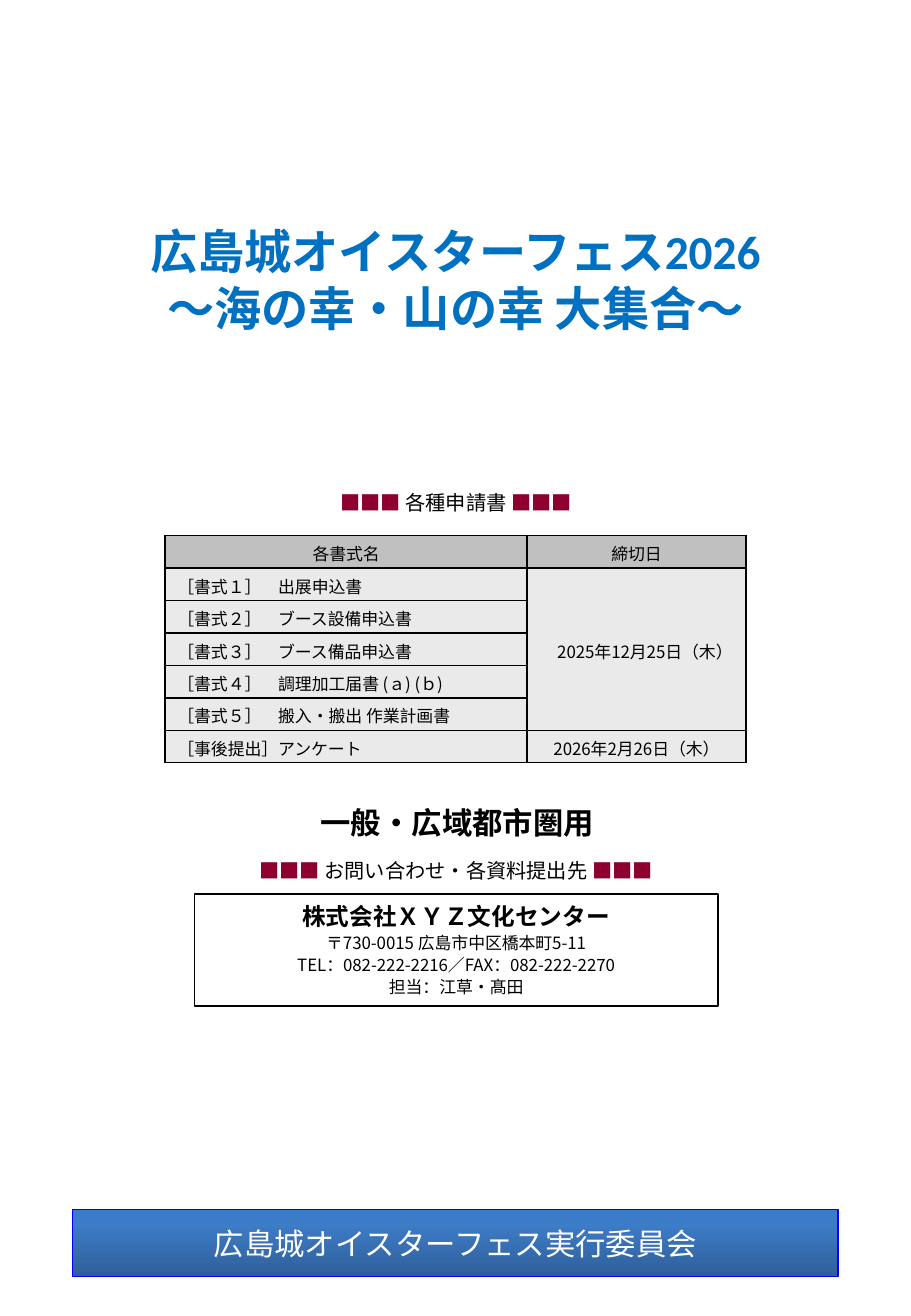
from copy import deepcopy

from lxml.etree import SubElement
from pptx import Presentation
from pptx.dml.color import RGBColor
from pptx.enum.shapes import MSO_SHAPE as SHAPE
from pptx.enum.text import MSO_ANCHOR as ANCHOR, MSO_AUTO_SIZE as AUTO, PP_ALIGN as ALIGN
from pptx.oxml.ns import qn
from pptx.util import Pt

BLACK = RGBColor(0, 0, 0)
WHITE = RGBColor(255, 255, 255)
TITLE_BLUE = RGBColor(0x00, 0x70, 0xC0)
WINE = RGBColor(0x8E, 0x00, 0x2F)
HEAD_GRAY = RGBColor(0xC0, 0xC0, 0xC0)
CELL_GRAY = RGBColor(0xEA, 0xEA, 0xEA)
LINE_BLUE = RGBColor(0, 0, 255)
BANNER = [(0, RGBColor(0x2F, 0x5F, 0x99)), (0.8, RGBColor(0x3D, 0x7C, 0xC7)),
          (1, RGBColor(0x3A, 0x7C, 0xCB))]
CALIBRI, NOTO = "Calibri", "Noto Sans CJK JP"


def add_run(p, text, size=10, font=NOTO, color=BLACK, bold=False):
    r = p.add_run()
    r.text = text
    f = r.font
    f.size, f.name, f.bold = Pt(size), font, bold
    f.color.rgb = color
    # East Asian text takes its face from a:ea
    SubElement(r._r.get_or_add_rPr(), qn("a:ea"), typeface=font)


def write(tf, lines, align=ALIGN.CENTER, spacing=None, **fmt):
    """Write one paragraph per line; a line is a text or a list of (text, overrides)."""
    for i, line in enumerate(lines):
        p = tf.paragraphs[0] if i == 0 else tf.add_paragraph()
        p.alignment = align
        if spacing:
            p.line_spacing = Pt(spacing[i])
        for text, own in [(line, {})] if isinstance(line, str) else line:
            add_run(p, text, **{**fmt, **own})


def add_borders(cell, width=1, color=BLACK):
    tcPr = cell._tc.get_or_add_tcPr()
    for i, side in enumerate(("a:lnL", "a:lnR", "a:lnT", "a:lnB")):
        ln = tcPr.makeelement(qn(side), {"w": str(Pt(width))})
        fill = SubElement(ln, qn("a:solidFill"))
        SubElement(fill, qn("a:srgbClr"), val=str(color))
        tcPr.insert(i, ln)


class Page:
    def __init__(self, prs):
        self.s = prs.slides.add_slide(prs.slide_layouts[5])

    def title(self, box, lines, **fmt):
        sp = self.s.shapes.title
        sp.left, sp.top, sp.width, sp.height = map(Pt, box)
        tf = sp.text_frame
        tf.auto_size, tf.vertical_anchor = AUTO.NONE, ANCHOR.TOP
        write(tf, lines, **fmt)

    def text(self, box, lines, **fmt):
        tf = self.s.shapes.add_textbox(*map(Pt, box)).text_frame
        tf.word_wrap = True
        write(tf, lines, **fmt)

    def heading(self, box, label):
        """Label between two rows of wine-red squares."""
        squares = {"color": WINE}
        line = [("■■■ ", squares), (label + " ", {}), ("■■■", squares)]
        self.text(box, [line], size=12, spacing=[15.4])

    def rect(self, box, lines, line_color, line_width, anchor, gradient=None, **fmt):
        sp = self.s.shapes.add_shape(SHAPE.RECTANGLE, *map(Pt, box))
        sp.shadow.inherit = False
        sp.line.color.rgb, sp.line.width = line_color, Pt(line_width)
        if gradient:
            sp.fill.gradient()
            sp.fill.gradient_angle = 90
            gs_list = sp.fill._xPr.find(qn("a:gradFill")).find(qn("a:gsLst"))
            gs_list.append(deepcopy(gs_list[-1]))
            for stop, (pos, color) in zip(sp.fill.gradient_stops, gradient):
                stop.position, stop.color.rgb = pos, color
        else:
            sp.fill.background()
        tf = sp.text_frame
        tf.word_wrap, tf.vertical_anchor = True, anchor
        write(tf, lines, **fmt)

    def table(self, box, rows, col_widths, merge):
        tbl = self.s.shapes.add_table(len(rows), len(col_widths), *map(Pt, box)).table
        for col, width in zip(tbl.columns, col_widths):
            col.width = Pt(width)
        for i, row in enumerate(rows):
            tbl.rows[i].height = Pt(box[3] / len(rows))
            for j, text in enumerate(row):
                cell = tbl.cell(i, j)
                cell.margin_top, cell.margin_bottom = Pt(3), Pt(1)
                cell.vertical_anchor = ANCHOR.MIDDLE
                cell.fill.solid()
                cell.fill.fore_color.rgb = CELL_GRAY if i else HEAD_GRAY
                add_borders(cell)
                if text:
                    left = i > 0 and j == 0
                    write(cell.text_frame, [text], ALIGN.LEFT if left else ALIGN.CENTER)
        first, last = merge
        tbl.cell(*first).merge(tbl.cell(*last))


def main():
    prs = Presentation()
    prs.slide_width, prs.slide_height = Pt(540), Pt(780)
    page = Page(prs)

    page.title((37.4, 128.2, 465.1, 74.9),
               ["広島城オイスターフェス2026", "～海の幸・山の幸 大集合～"],
               size=28, font=CALIBRI, color=TITLE_BLUE, bold=True)

    page.heading((169.2, 285.8, 202.3, 21.6), "各種申請書")
    forms = [
        ("各書式名", "締切日"),
        ("［書式１］　出展申込書", "　2025年12月25日（木）"),
        ("［書式２］　ブース設備申込書", ""),
        ("［書式３］　ブース備品申込書", ""),
        ("［書式４］　調理加工届書 (ａ) (ｂ)", ""),
        ("［書式５］　搬入・搬出 作業計画書", ""),
        ("［事後提出］アンケート", "2026年2月26日（木）"),
    ]
    page.table((97.9, 317.5, 344.2, 134.6), forms, (214.5, 129.7), ((1, 1), (5, 1)))

    page.text((80.6, 473, 380.9, 28.8), ["一般・広域都市圏用"],
              size=18, font=CALIBRI, bold=True)
    page.heading((126, 504, 288.7, 21.6), "お問い合わせ・各資料提出先")
    company = [("株式会社ＸＹＺ文化センター", {"size": 14, "bold": True})]
    page.rect((115.2, 529.9, 310.3, 66.2),
              [company, "〒730-0015 広島市中区橋本町5-11",
               "TEL：082-222-2216／FAX：082-222-2270", "担当：江草・髙田"],
              BLACK, 1, ANCHOR.TOP, spacing=[18.2, 13, 13, 13])

    page.rect((43.2, 717.1, 453.6, 39.6), ["広島城オイスターフェス実行委員会"],
              LINE_BLUE, 0.75, ANCHOR.MIDDLE, gradient=BANNER,
              size=18, font=CALIBRI, color=WHITE)
    prs.save("out.pptx")


if __name__ == "__main__":
    main()
